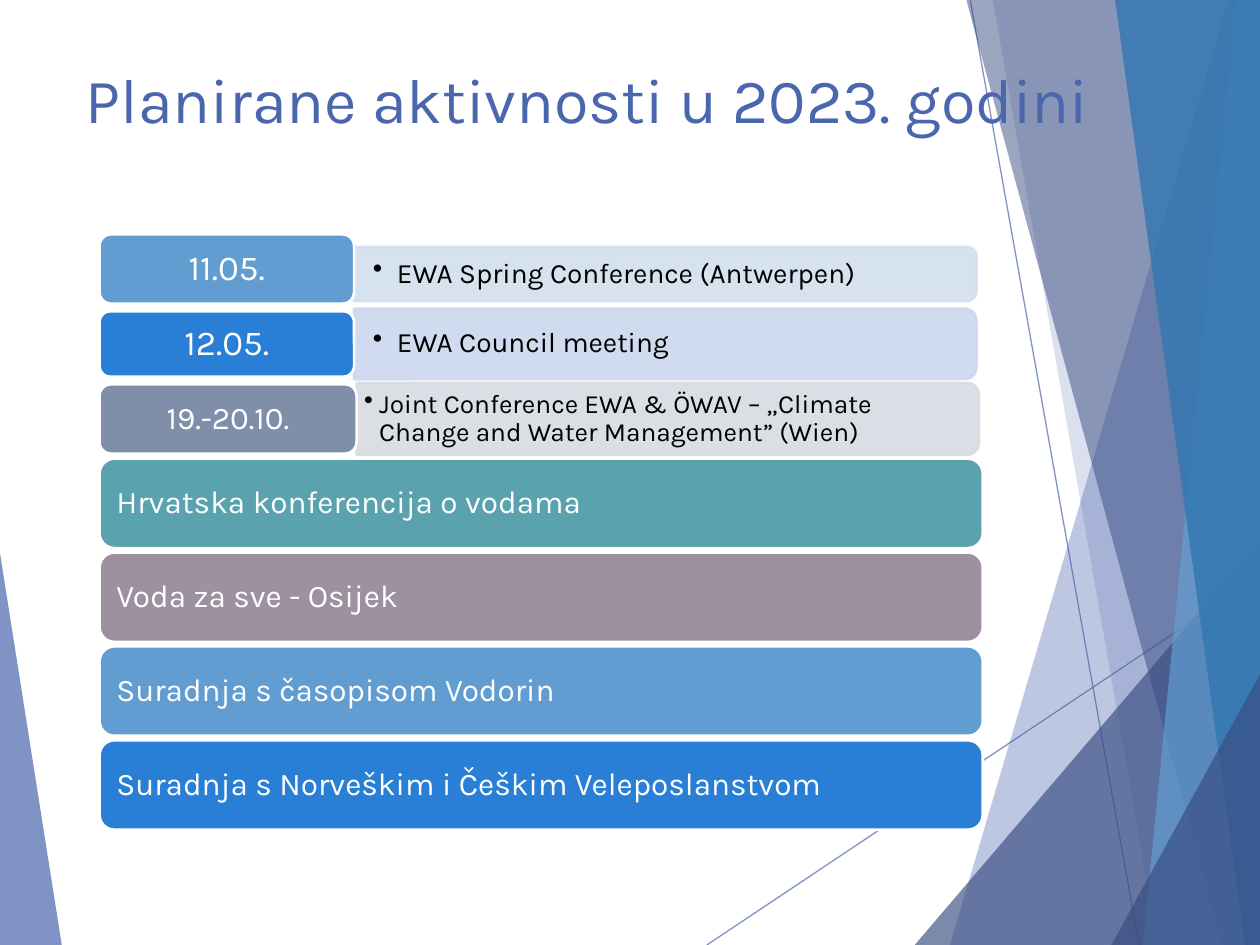
from lxml import etree
from pptx import Presentation
from pptx.dml.color import RGBColor
from pptx.enum import shapes, text
from pptx.oxml.ns import qn
from pptx.util import Inches, Pt

THEME = {
    "font": "Karla",
    "accent": "4A66AC", "navy": "384C81", "sky": "629DD1", "steel": "3477B2",
    "blue": "297FD5", "slate": "7F8FA9", "teal": "5AA2AE", "mauve": "9D90A0",
    "ice": "D3DFEE", "lilac": "CDD8EF", "fog": "D8DBE2",
    "white": "FFFFFF", "black": "000000",
    "title": 36, "date": 20, "topic": 18, "event": 16, "small_event": 15,
}

TITLE = "Planirane aktivnosti u 2023. godini"

# colour, opacity in percent, corner points
FACETS_BEHIND = [("accent", 70, [(0, 4.39), (0.49, 7.5), (0, 7.5)])]
RAYS = [((5.61, 7.5), (10, 4.57)), ((7.7, 0), (9.04, 7.5))]
FACETS = [
    ("accent", 36, [(9.75, 0), (7.54, 7.5), (10, 7.5), (10, 0)]),
    ("accent", 20, [(7.88, 0), (9.19, 7.5), (10, 7.5), (10, 0)]),
    ("navy", 66, [(7.26, 7.5), (10, 4.29), (10, 7.5)]),
    ("navy", 50, [(7.67, 0), (9.7, 7.5), (10, 7.5), (10, 0)]),
    ("sky", 70, [(9.81, 0), (9.07, 7.5), (10, 7.5), (10, 0)]),
    ("steel", 82, [(8.85, 0), (9.88, 7.5), (10, 7.5), (10, 0)]),
    ("navy", 66, [(8.82, 7.5), (10, 5.35), (10, 7.5)]),
]

# date, its colour, size, top, width, height; event, its colour, size, top, height, inset, indent
EVENTS = [
    (("11.05.", "sky", "date", 1.86, 2.02, 0.55),
     ("EWA Spring Conference (Antwerpen)", "ice", "event", 1.96, 0.43, 0.15, 0.19)),
    (("12.05.", "blue", "date", 2.47, 2.02, 0.52),
     ("EWA Council meeting", "lilac", "event", 2.45, 0.56, 0.15, 0.19)),
    (("19.-20.10.", "slate", "topic", 3.05, 2.04, 0.55),
     ("Joint Conference EWA & ÖWAV – „Climate Change and Water Management” (Wien)",
      "fog", "small_event", 3.04, 0.57, 0.06, 0.12)),
]
TOPICS = [
    ("Hrvatska konferencija o vodama", "teal"),
    ("Voda za sve - Osijek", "mauve"),
    ("Suradnja s časopisom Vodorin", "sky"),
    ("Suradnja s Norveškim i Češkim Veleposlanstvom", "blue"),
]
LEFT = 0.79
EVENT_WIDTH, EVENT_TEXT_WIDTH = 4.94, 4.9
TOPIC_TOP, TOPIC_PITCH, TOPIC_WIDTH, TOPIC_HEIGHT = 3.64, 0.745, 7.01, 0.71


def rgb(name):
    return RGBColor.from_string(THEME[name])


def set_opacity(fill_or_line, percent):
    for color in fill_or_line.iter(qn("a:srgbClr")):
        etree.SubElement(color, qn("a:alpha")).set("val", str(percent * 1000))


def paint(shape, color, opacity=100, outline=None):
    shape.shadow.inherit = False
    shape.fill.solid()
    shape.fill.fore_color.rgb = rgb(color)
    if outline:
        shape.line.color.rgb = rgb(outline)
        shape.line.width = Pt(1.5)
    else:
        shape.line.fill.background()
    if opacity < 100:
        set_opacity(shape._element.spPr, opacity)


def write(box, words, size, color="white", align=text.PP_ALIGN.LEFT, inset=0.1,
          indent=0, hanging=0, spacing=0.9, anchor=text.MSO_ANCHOR.MIDDLE):
    """Fill the box with one paragraph; a hanging indent brings a bullet."""
    frame = box.text_frame
    frame.word_wrap = True
    frame.auto_size = text.MSO_AUTO_SIZE.NONE
    frame.vertical_anchor = anchor
    frame.margin_left = frame.margin_right = Inches(inset)
    frame.margin_top = frame.margin_bottom = Inches(0.04)
    para = frame.paragraphs[0]
    para.alignment = align
    para.line_spacing = spacing
    span = para.add_run()
    span.text = words
    span.font.name = THEME["font"]
    span.font.size = Pt(THEME[size])
    span.font.color.rgb = rgb(color)
    props = para._p.get_or_add_pPr()
    props.set("marL", str(Inches(indent + hanging)))
    props.set("indent", str(-Inches(hanging)))
    if hanging:
        etree.SubElement(props, qn("a:buChar")).set("char", "•")


def add_facet(page, color, opacity, points):
    corners = [(Inches(x), Inches(y)) for x, y in points]
    builder = page.shapes.build_freeform(*corners[0])
    builder.add_line_segments(corners[1:], close=True)
    paint(builder.convert_to_shape(), color, opacity)


def add_ray(page, start, end):
    ray = page.shapes.add_connector(
        shapes.MSO_CONNECTOR.STRAIGHT, *(Inches(n) for n in start + end))
    ray.line.color.rgb = rgb("accent")
    ray.line.width = Pt(0.75)
    set_opacity(ray._element.spPr, 70)
    etree.SubElement(ray._element.spPr, qn("a:effectLst"))


def add_card(page, words, color, size, top, width, height, **style):
    card = page.shapes.add_shape(
        shapes.MSO_SHAPE.ROUNDED_RECTANGLE,
        Inches(LEFT), Inches(top), Inches(width), Inches(height))
    paint(card, color, outline="white")
    write(card, words, size, **style)


def add_event(page, left, words, color, size, top, height, inset, hanging):
    """Place a band rounded on its right side, with a bulleted text over it."""
    shift = (EVENT_WIDTH - height) / 2
    band = page.shapes.add_shape(
        shapes.MSO_SHAPE.ROUND_2_SAME_RECTANGLE,
        Inches(left + shift), Inches(top - shift), Inches(height), Inches(EVENT_WIDTH))
    band.rotation = 90
    paint(band, color, 90, outline=color)
    box = page.shapes.add_textbox(
        Inches(left), Inches(top), Inches(EVENT_TEXT_WIDTH), Inches(height))
    write(box, words, size, color="black", inset=inset, hanging=hanging)


def main():
    deck = Presentation()
    deck.slide_width, deck.slide_height = Inches(10), Inches(7.5)
    page = deck.slides.add_slide(deck.slide_layouts[5])

    for facet in FACETS_BEHIND:
        add_facet(page, *facet)
    for ray in RAYS:
        add_ray(page, *ray)
    for facet in FACETS:
        add_facet(page, *facet)

    title = page.shapes.title
    title.left, title.top = Inches(0.51), Inches(0.44)
    title.width, title.height = Inches(9.13), Inches(1.02)
    write(title, TITLE, "title", color="accent", indent=0.07, spacing=1.0,
          anchor=text.MSO_ANCHOR.TOP)
    page.shapes._spTree.append(title._element)  # bring the title above the facets

    for date, event in EVENTS:
        add_event(page, LEFT + date[4], *event)
        add_card(page, *date, align=text.PP_ALIGN.CENTER, inset=0.08)
    for row, (words, color) in enumerate(TOPICS):
        add_card(page, words, color, "topic", TOPIC_TOP + row * TOPIC_PITCH,
                 TOPIC_WIDTH, TOPIC_HEIGHT)

    deck.save("out.pptx")


if __name__ == "__main__":
    main()
